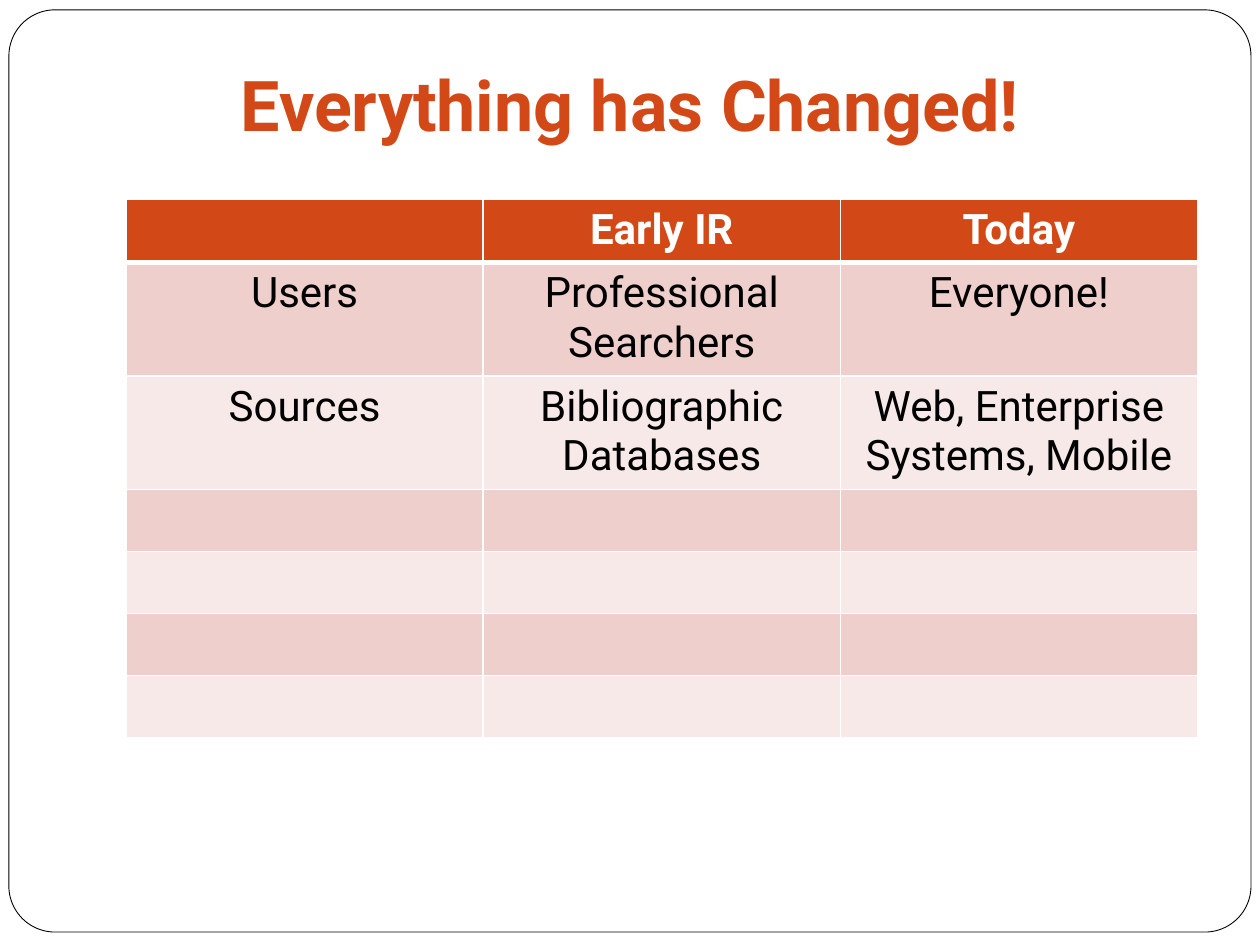
import dataclasses

import lxml.etree
import pptx
import pptx.dml.color
import pptx.enum.shapes
import pptx.enum.text
import pptx.oxml.ns
import pptx.table
import pptx.text.text
import pptx.util
from pptx.dml.color import RGBColor
from pptx.util import Cm

FONT = "Roboto"
ORANGE = RGBColor(0xD3, 0x48, 0x17)
DARK_BAND = RGBColor(0xEF, 0xCF, 0xCC)
LIGHT_BAND = RGBColor(0xF7, 0xE9, 0xE8)
WHITE = RGBColor(0xFF, 0xFF, 0xFF)
BLACK = RGBColor(0, 0, 0)

SINGLE_LINE = Cm(1.25)
DOUBLE_LINE = Cm(2.24)
COLUMN_WIDTH = Cm(7.2)
THIN, THICK = 1, 3


@dataclasses.dataclass(frozen=True)
class TextStyle:
    size: int
    color: RGBColor
    bold: bool = False


@dataclasses.dataclass(frozen=True)
class Row:
    """A table row; each cell is a tuple of paragraphs."""

    cells: tuple[tuple[str, ...], ...] = ((), (), ())
    height: int = SINGLE_LINE


TITLE_STYLE = TextStyle(40, ORANGE, bold=True)
HEADER_STYLE = TextStyle(24, WHITE, bold=True)
BODY_STYLE = TextStyle(24, BLACK)

ROWS = (
    Row(((), ("Early IR",), ("Today",))),
    Row((("Users",), ("Professional Searchers",), ("Everyone!",)), DOUBLE_LINE),
    Row(
        (
            ("Sources",),
            ("Bibliographic", "Databases"),
            ("Web, Enterprise Systems, Mobile",),
        ),
        DOUBLE_LINE,
    ),
    *[Row()] * 4,
)


def write(
    frame: pptx.text.text.TextFrame, lines: tuple[str, ...], style: TextStyle
) -> None:
    for index, line in enumerate(lines):
        paragraph = frame.add_paragraph() if index else frame.paragraphs[0]
        paragraph.alignment = pptx.enum.text.PP_ALIGN.CENTER
        run = paragraph.add_run()
        run.text = line
        run.font.name = FONT
        run.font.size = pptx.util.Pt(style.size)
        run.font.bold = style.bold
        run.font.color.rgb = style.color


def add_borders(cell: pptx.table._Cell, top: int, bottom: int) -> None:
    """Draw white cell borders; call before the fill, which must follow in the XML."""
    qn = pptx.oxml.ns.qn
    properties = cell._tc.get_or_add_tcPr()
    for tag, points in (
        ("a:lnL", THIN), ("a:lnR", THIN), ("a:lnT", top), ("a:lnB", bottom)
    ):
        width = str(pptx.util.Pt(points))
        line = lxml.etree.SubElement(properties, qn(tag), w=width)
        fill = lxml.etree.SubElement(line, qn("a:solidFill"))
        lxml.etree.SubElement(fill, qn("a:srgbClr"), val=str(WHITE))


def add_frame(slide: pptx.slide.Slide) -> None:
    frame = slide.shapes.add_shape(
        pptx.enum.shapes.MSO_SHAPE.ROUNDED_RECTANGLE,
        Cm(0.18), Cm(0.2), Cm(25.04), Cm(18.59),
    )
    frame.adjustments[0] = 0.05
    frame.shadow.inherit = False
    frame.fill.solid()
    frame.fill.fore_color.rgb = WHITE
    frame.line.color.rgb = BLACK
    frame.line.width = pptx.util.Pt(0.5)


def add_title(slide: pptx.slide.Slide, title: str) -> None:
    box = slide.shapes.add_textbox(Cm(1.9), Cm(0), Cm(21.6), Cm(3.18))
    frame = box.text_frame
    frame.word_wrap = True
    frame.vertical_anchor = pptx.enum.text.MSO_ANCHOR.BOTTOM
    frame.margin_bottom = Cm(0.25)
    write(frame, (title,), TITLE_STYLE)


def add_comparison(slide: pptx.slide.Slide, rows: tuple[Row, ...]) -> None:
    columns = len(rows[0].cells)
    table = slide.shapes.add_table(
        len(rows), columns, Cm(2.54), Cm(4.02),
        COLUMN_WIDTH * columns, sum(row.height for row in rows),
    ).table
    for column in table.columns:
        column.width = COLUMN_WIDTH
    for r, row in enumerate(rows):
        table.rows[r].height = row.height
        is_header = r == 0
        band = ORANGE if is_header else DARK_BAND if r % 2 else LIGHT_BAND
        for c, lines in enumerate(row.cells):
            cell = table.cell(r, c)
            add_borders(
                cell,
                top=THICK if r == 1 else THIN,
                bottom=THICK if is_header else THIN,
            )
            cell.fill.solid()
            cell.fill.fore_color.rgb = band
            write(cell.text_frame, lines, HEADER_STYLE if is_header else BODY_STYLE)


def main() -> None:
    presentation = pptx.Presentation()
    presentation.slide_width = Cm(25.4)
    presentation.slide_height = Cm(19.05)
    slide = presentation.slides.add_slide(presentation.slide_layouts[6])
    add_frame(slide)
    add_title(slide, "Everything has Changed!")
    add_comparison(slide, ROWS)
    presentation.save("out.pptx")


if __name__ == "__main__":
    main()
